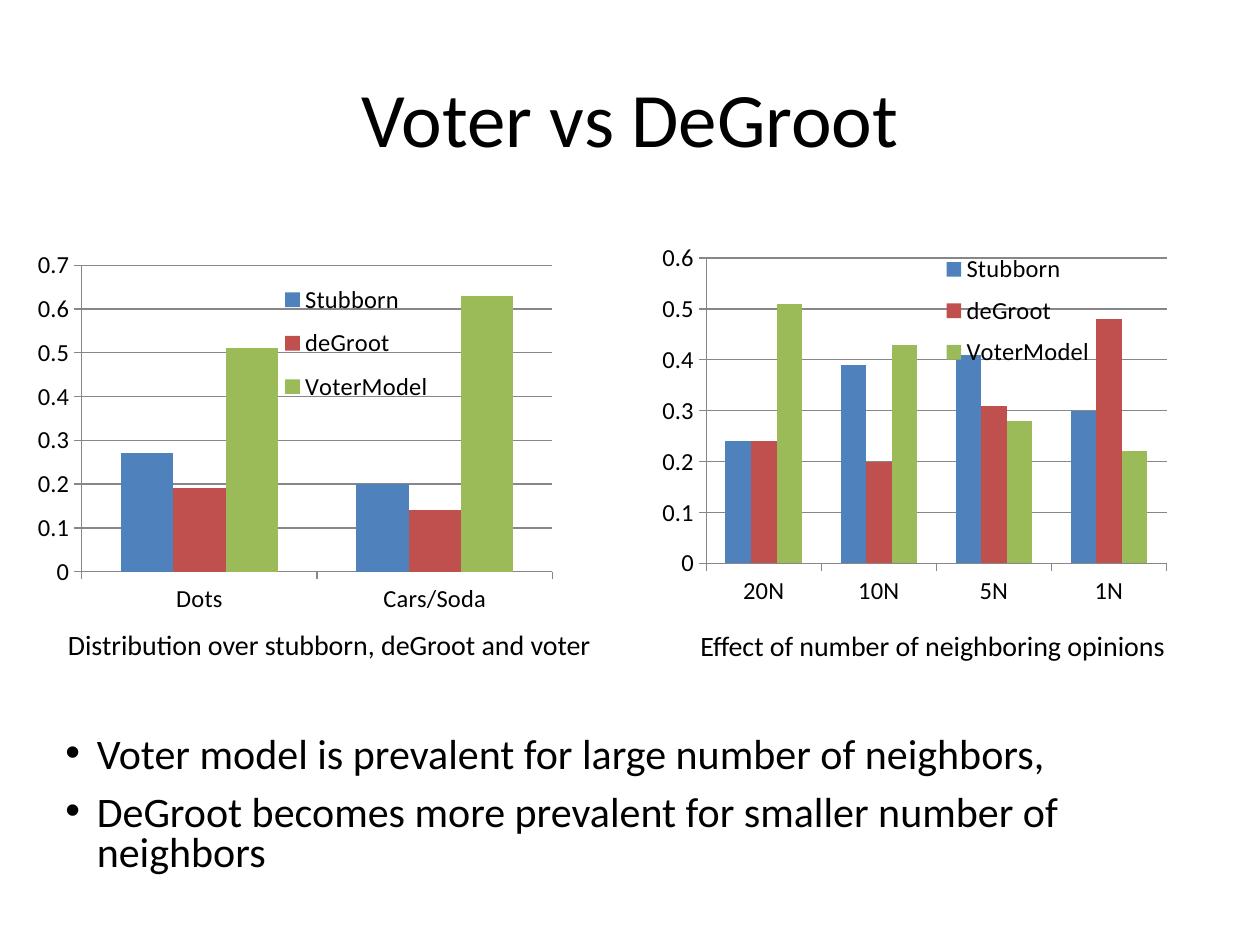
import pptx
import pptx.chart.data
import pptx.dml.color
import pptx.enum.chart
import pptx.enum.text
import pptx.oxml
import pptx.oxml.ns
import pptx.util
from pptx.util import Inches, Pt

FONT = "Calibri"
COLORS = {
    "text": "000000",
    "axis": "878787",
    "Stubborn": "4F81BD",
    "deGroot": "C0504D",
    "VoterModel": "9BBB59",
}

TITLE = "Voter vs DeGroot"
BULLETS = [
    "Voter model is prevalent for large number of neighbors,",
    "DeGroot becomes more prevalent for smaller number of neighbors",
]
# Boxes are left, top, width, height: inches on the slide, fractions in a chart
CHARTS = [
    {
        "box": (0.12, 1.98, 4.27, 2.92),
        "plot": (0.124, 0.043, 0.876, 0.833),
        "legend": (0.47, 0.06, 0.33, 0.39),
        "maximum": 0.7,
        "categories": ["Dots", "Cars/Soda"],
        "series": {
            "Stubborn": (0.27, 0.2),
            "deGroot": (0.19, 0.14),
            "VoterModel": (0.51, 0.63),
        },
        "caption": "Distribution over stubborn, deGroot and voter",
        "caption_box": (0.44, 4.93, 4.41, 0.37),
    },
    {
        "box": (5.16, 1.9, 4.17, 2.91),
        "plot": (0.107, 0.051, 0.876, 0.833),
        "legend": (0.53, 0.01, 0.34, 0.37),
        "maximum": 0.6,
        "categories": ["20N", "10N", "5N", "1N"],
        "series": {
            "Stubborn": (0.24, 0.39, 0.41, 0.3),
            "deGroot": (0.24, 0.2, 0.31, 0.48),
            "VoterModel": (0.51, 0.43, 0.28, 0.22),
        },
        "caption": "Effect of number of neighboring opinions",
        "caption_box": (5.46, 4.94, 3.94, 0.37),
    },
]


def color(name):
    return pptx.dml.color.RGBColor.from_string(COLORS[name])


def style_font(font, size):
    font.name = FONT
    font.size = Pt(size)
    font.color.rgb = color("text")


def add_run(paragraph, text, size):
    run = paragraph.add_run()
    run.text = text
    style_font(run.font, size)


def add_text_box(slide, box, wrap):
    frame = slide.shapes.add_textbox(*map(Inches, box)).text_frame
    frame.word_wrap = wrap
    return frame


def manual_layout(box, inner=False):
    target = '<c:layoutTarget val="inner"/>' if inner else ""
    modes = "".join(f'<c:{side}Mode val="edge"/>' for side in "xy")
    places = "".join(f'<c:{key} val="{value}"/>' for key, value in zip("xywh", box))
    return pptx.oxml.parse_xml(
        f'<c:layout {pptx.oxml.ns.nsdecls("c")}><c:manualLayout>'
        f"{target}{modes}{places}</c:manualLayout></c:layout>"
    )


def set_layout(parent, layout, position):
    for old in parent.findall(pptx.oxml.ns.qn("c:layout")):
        parent.remove(old)
    parent.insert(position, layout)


def add_column_chart(slide, item):
    data = pptx.chart.data.CategoryChartData()
    data.categories = item["categories"]
    for name, values in item["series"].items():
        data.add_series(name, values)
    chart = slide.shapes.add_chart(
        pptx.enum.chart.XL_CHART_TYPE.COLUMN_CLUSTERED,
        *map(Inches, item["box"]), data,
    ).chart
    chart.has_title = False
    style_font(chart.font, 10)

    # Columns
    plot = chart.plots[0]
    plot.gap_width = 150
    plot.overlap = 0
    plot.vary_by_categories = False
    for series in plot.series:
        series.format.fill.solid()
        series.format.fill.fore_color.rgb = color(series.name)

    # Axes
    for axis in (chart.category_axis, chart.value_axis):
        style_font(axis.tick_labels.font, 14)
        axis.major_tick_mark = pptx.enum.chart.XL_TICK_MARK.OUTSIDE
        axis.format.line.color.rgb = color("axis")
    value_axis = chart.value_axis
    value_axis.minimum_scale = 0
    value_axis.maximum_scale = item["maximum"]
    value_axis.major_unit = 0.1
    value_axis.has_major_gridlines = True
    value_axis.major_gridlines.format.line.color.rgb = color("axis")

    # Legend over the plot
    chart.has_legend = True
    legend = chart.legend
    legend.position = pptx.enum.chart.XL_LEGEND_POSITION.RIGHT
    legend.include_in_layout = False
    style_font(legend.font, 14)
    set_layout(legend._element, manual_layout(item["legend"]), 1)
    plot_area = chart._chartSpace.chart.plotArea
    set_layout(plot_area, manual_layout(item["plot"], inner=True), 0)


def add_bullets(slide):
    frame = add_text_box(slide, (0.42, 5.8, 8.98, 1.26), True)
    for index, text in enumerate(BULLETS):
        paragraph = frame.add_paragraph() if index else frame.paragraphs[0]
        paragraph.line_spacing = 0.8
        if index:
            paragraph.space_before = Pt(10)
        properties = paragraph._p.get_or_add_pPr()
        properties.set("marL", str(Inches(0.25)))
        properties.set("indent", str(-Inches(0.25)))
        for xml in ('<a:buFont {} typeface="Arial"/>', '<a:buChar {} char="•"/>'):
            properties.append(
                pptx.oxml.parse_xml(xml.format(pptx.oxml.ns.nsdecls("a")))
            )
        add_run(paragraph, text, 24)


def main():
    presentation = pptx.Presentation()
    presentation.slide_width = Inches(10)
    presentation.slide_height = Inches(7.5)
    slide = presentation.slides.add_slide(presentation.slide_layouts[5])

    # Title
    title = slide.shapes.title
    title.left, title.top, title.width, title.height = map(Inches, (0.5, 0.3, 9, 1.25))
    title.text_frame.vertical_anchor = pptx.enum.text.MSO_ANCHOR.MIDDLE
    paragraph = title.text_frame.paragraphs[0]
    paragraph.alignment = pptx.enum.text.PP_ALIGN.CENTER
    add_run(paragraph, TITLE, 44)

    # Charts with captions
    for item in CHARTS:
        add_column_chart(slide, item)
        caption = add_text_box(slide, item["caption_box"], False)
        add_run(caption.paragraphs[0], item["caption"], 16)

    add_bullets(slide)
    presentation.save("out.pptx")


if __name__ == "__main__":
    main()
